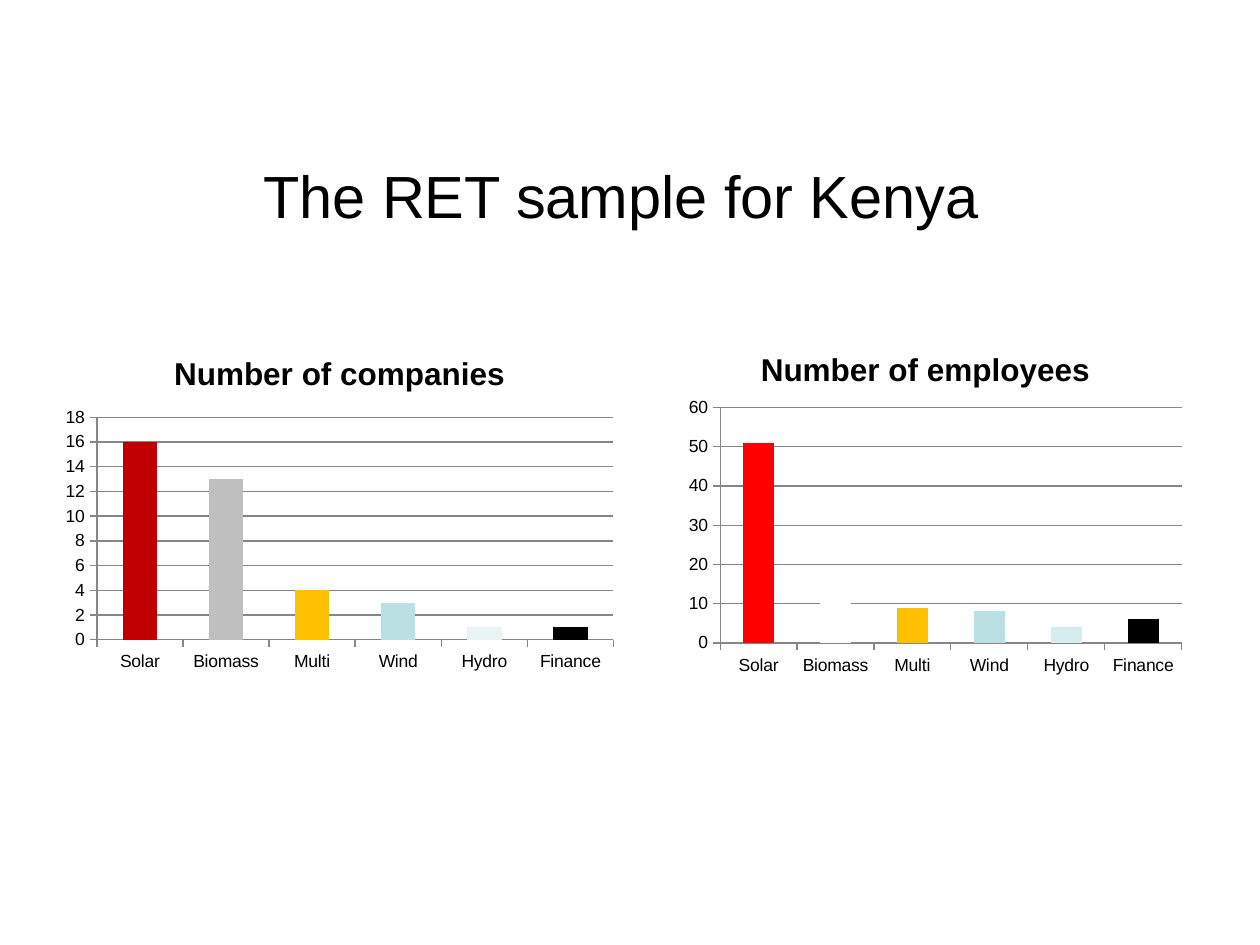
from dataclasses import dataclass

from lxml.etree import SubElement
from pptx import Presentation
from pptx.chart.data import CategoryChartData
from pptx.dml.color import RGBColor as RGB
from pptx.enum.chart import XL_CHART_TYPE as Kind, XL_TICK_MARK as Tick
from pptx.enum.text import MSO_ANCHOR as Anchor, PP_ALIGN as Align
from pptx.oxml.ns import qn
from pptx.util import Inches, Pt


@dataclass
class Theme:
    font: str = "Arial"
    ink: str = "000000"
    grid: str = "868686"
    multi: str = "FFC000"
    wind: str = "BBE0E3"
    title: int = 34
    head: int = 18
    label: int = 10


theme = Theme()


def style(font, size, bold=False):
    font.name = theme.font
    font.size = Pt(size)
    font.bold = bold
    font.color.rgb = RGB.from_string(theme.ink)


def place(chart, box):
    """Fix the inner plot area; box holds fractions of the chart's size."""
    area = chart._chartSpace.chart.plotArea
    for old in area.findall(qn("c:layout")):
        area.remove(old)
    layout = SubElement(area, qn("c:layout"))
    area.insert(0, layout)
    manual = SubElement(layout, qn("c:manualLayout"))
    tags = ("layoutTarget", "xMode", "yMode", "x", "y", "w", "h")
    for tag, val in zip(tags, ("inner", "edge", "edge", *box)):
        SubElement(manual, qn("c:" + tag)).set("val", str(val))


prs = Presentation()
prs.slide_width, prs.slide_height = Inches(10), Inches(7.5)
slide = prs.slides.add_slide(prs.slide_layouts[5])

title = slide.shapes.title
title.left, title.top = Inches(0.43), Inches(0.92)
title.width, title.height = Inches(9), Inches(1.25)
title.text_frame.vertical_anchor = Anchor.MIDDLE
para = title.text_frame.paragraphs[0]
para.alignment = Align.CENTER
run = para.add_run()
run.text = "The RET sample for Kenya"
style(run.font, theme.title)

sectors = ["Solar", "Biomass", "Multi", "Wind", "Hydro", "Finance"]
charts = [
    dict(kind=Kind.COLUMN_CLUSTERED, at=(0.43, 2.65, 4.53, 2.76),
         plot=(0.075, 0.24, 0.905, 0.64), head="Number of companies",
         vals=[16, 13, 4, 3, 1, 1], top=18, step=2,
         fills=["C00000", "BFBFBF", theme.multi, theme.wind, "E9F4F5", theme.ink]),
    dict(kind=Kind.COLUMN_STACKED, at=(5.39, 3.12, 4.07, 2.28),
         plot=(0.08, 0.05, 0.9, 0.82), head=None,
         vals=[51, 17, 9, 8, 4, 6], top=60, step=10,
         fills=["FF0000", "FFFFFF", theme.multi, theme.wind, "D6ECEE", theme.ink]),
]

for item in charts:
    data = CategoryChartData(number_format="0")
    data.categories = sectors
    data.add_series("Series 1", item["vals"])
    box = [Inches(n) for n in item["at"]]
    chart = slide.shapes.add_chart(item["kind"], *box, data).chart
    style(chart.font, theme.label)
    chart.has_legend = False
    chart.has_title = item["head"] is not None
    if chart.has_title:
        run = chart.chart_title.text_frame.paragraphs[0].add_run()
        run.text = item["head"]
        style(run.font, theme.head, bold=True)
    place(chart, item["plot"])

    axis = chart.value_axis
    axis.minimum_scale, axis.maximum_scale = 0, item["top"]
    axis.major_unit = item["step"]
    axis.has_major_gridlines = True
    for line in (axis.major_gridlines.format.line, axis.format.line,
                 chart.category_axis.format.line):
        line.color.rgb = RGB.from_string(theme.grid)
        line.width = Pt(0.75)
    for axis in (chart.value_axis, chart.category_axis):
        axis.major_tick_mark = Tick.OUTSIDE
        axis.minor_tick_mark = Tick.NONE

    plot = chart.plots[0]
    plot.gap_width = 150
    plot.vary_by_categories = False
    bars = plot.series[0]
    bars.format.fill.solid()
    bars.format.fill.fore_color.rgb = RGB.from_string(theme.wind)
    for i, color in enumerate(item["fills"]):
        if color != theme.wind:
            fill = bars.points[i].format.fill
            fill.solid()
            fill.fore_color.rgb = RGB.from_string(color)

head = slide.shapes.add_textbox(Inches(5.94), Inches(2.73), Inches(3.07), Inches(0.4))
head.text_frame.word_wrap = True
run = head.text_frame.paragraphs[0].add_run()
run.text = "Number of employees"
style(run.font, theme.head, bold=True)

prs.save("out.pptx")
